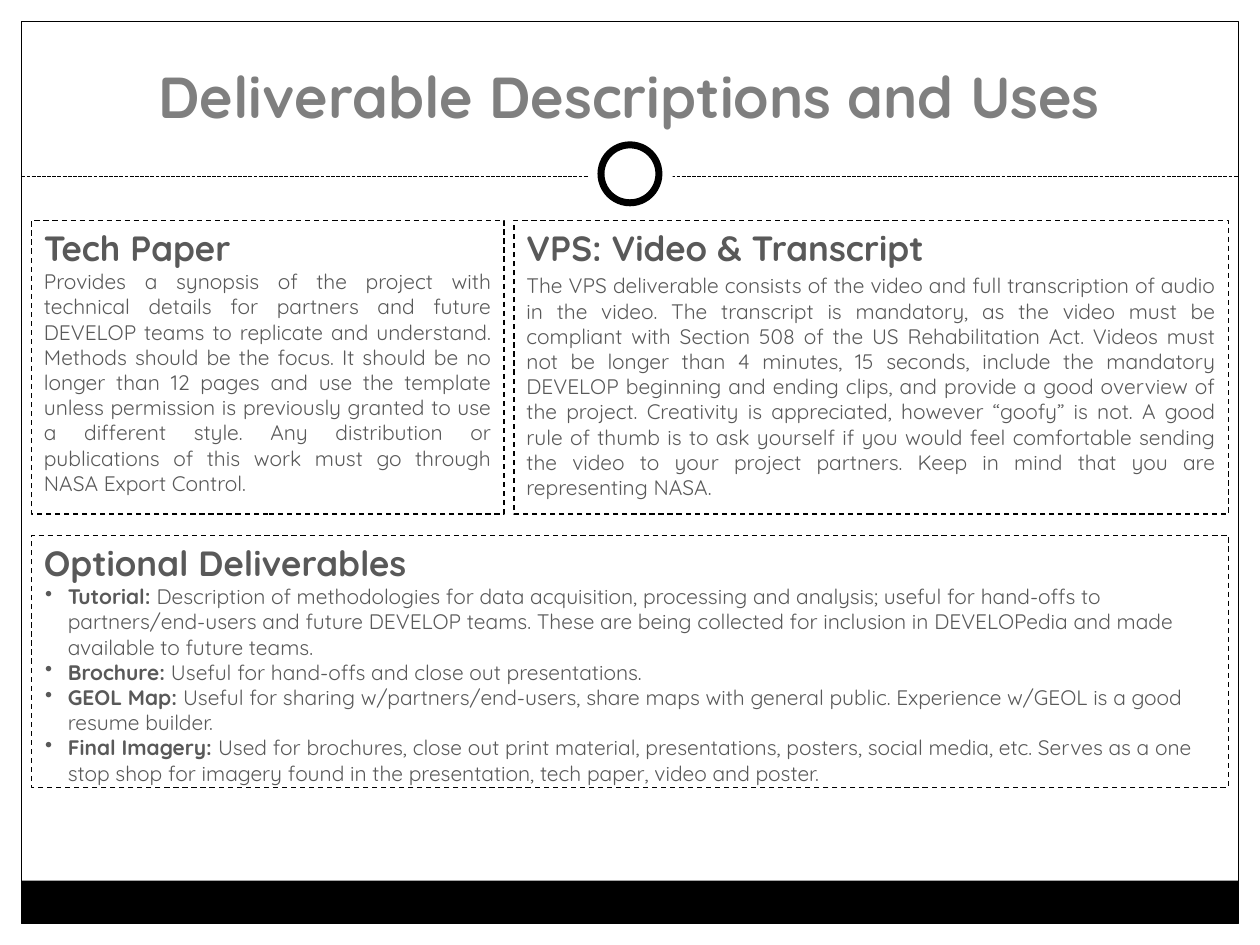
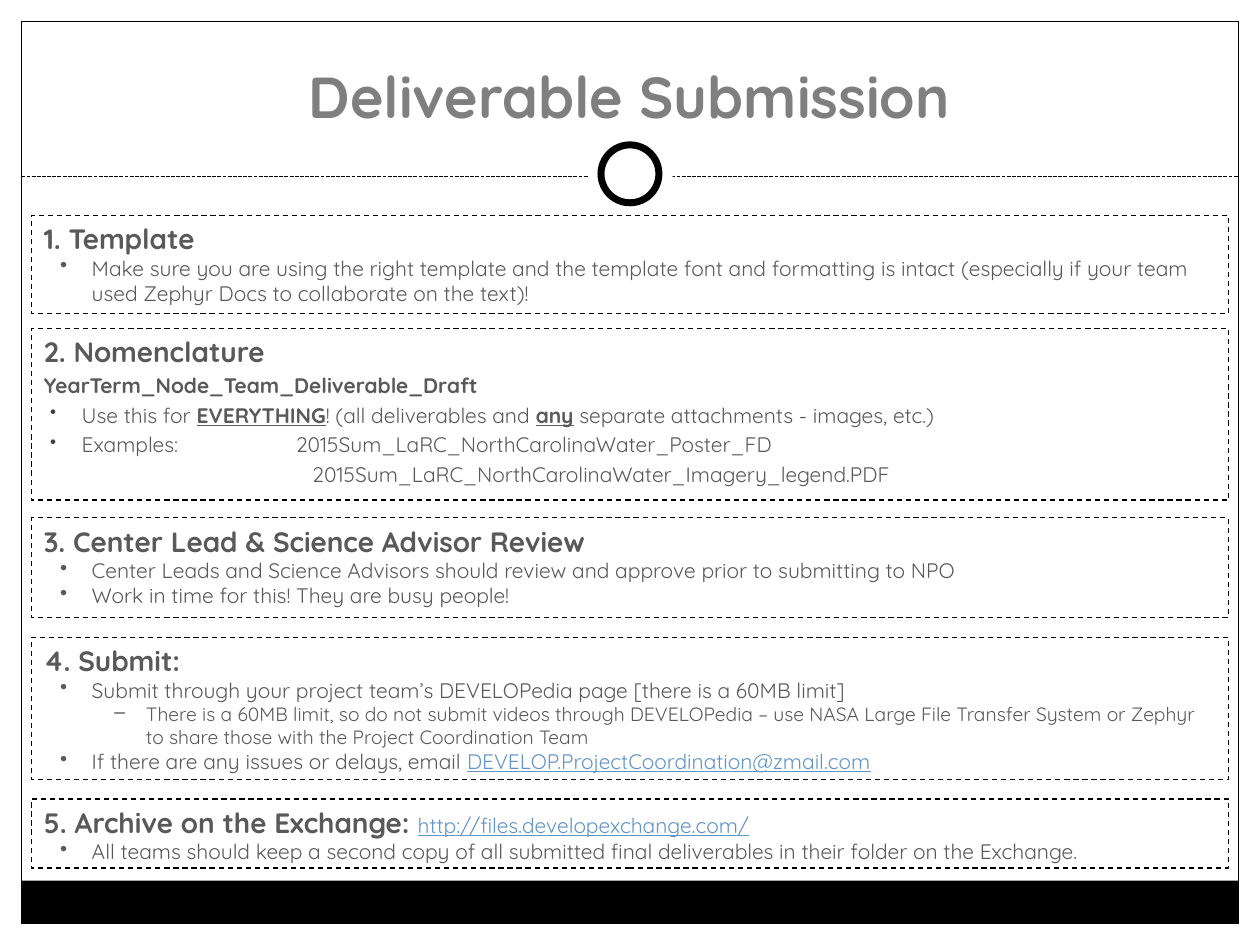
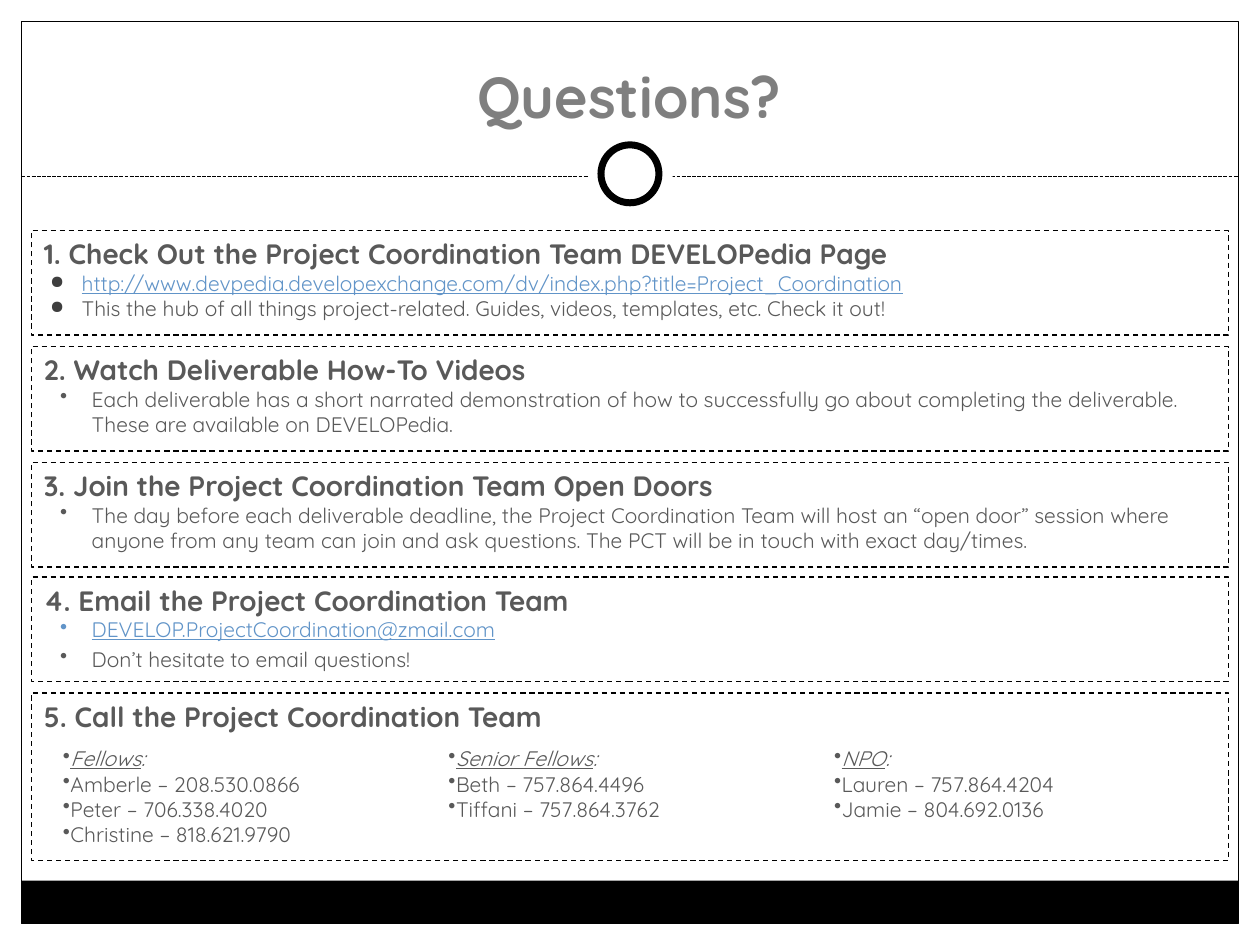
from dataclasses import dataclass

from lxml import etree
from pptx import Presentation
from pptx.dml.color import RGBColor
from pptx.enum.dml import MSO_LINE
from pptx.enum.shapes import MSO_CONNECTOR, MSO_SHAPE
from pptx.enum.text import MSO_ANCHOR, PP_ALIGN
from pptx.oxml.ns import qn
from pptx.shapes.autoshape import Shape
from pptx.slide import Slide
from pptx.text.text import TextFrame
from pptx.util import Emu, Pt

RECT = MSO_SHAPE.RECTANGLE
OVAL = MSO_SHAPE.OVAL
DASH = MSO_LINE.DASH
DOTS = MSO_LINE.SQUARE_DOT
STRAIGHT = MSO_CONNECTOR.STRAIGHT
TOP = MSO_ANCHOR.TOP
BOTTOM = MSO_ANCHOR.BOTTOM
LEFT = PP_ALIGN.LEFT
CENTER = PP_ALIGN.CENTER
JUST = PP_ALIGN.JUSTIFY

SCALE = 9144


def px(size: int) -> Emu:
    return Emu(size * SCALE)


@dataclass(frozen=True)
class Theme:
    font: str = "Quicksand"
    black: RGBColor = RGBColor(0x00, 0x00, 0x00)
    white: RGBColor = RGBColor(0xFF, 0xFF, 0xFF)
    title: RGBColor = RGBColor(0x7F, 0x7F, 0x7F)
    text: RGBColor = RGBColor(0x59, 0x59, 0x59)
    link: RGBColor = RGBColor(0x61, 0x94, 0xC8)
    dot: RGBColor = RGBColor(0x3F, 0x3F, 0x3F)
    banner: int = 33
    large: int = 20
    head: int = 16
    body: int = 12
    small: int = 11
    thin: float = 0.75
    thick: float = 4


THEME = Theme()


@dataclass(frozen=True)
class Box:
    left: int
    top: int
    width: int
    height: int


@dataclass(frozen=True)
class Dent:
    left: int = 0
    hang: int = 0
    mark: str = ""
    small: bool = False


@dataclass(frozen=True)
class Bit:
    text: str
    size: int = THEME.body
    color: RGBColor = THEME.text
    bold: bool = False
    slant: bool = False
    under: bool = False


@dataclass(frozen=True)
class Para:
    bits: tuple[Bit, ...]
    dent: Dent = Dent()
    gap: bool = False
    align: PP_ALIGN = LEFT


@dataclass(frozen=True)
class Panel:
    box: Box
    paras: tuple[Para, ...]


FLAT = Dent()
NEAR = Dent(19, -18, "•")
FAR = Dent(38, -25, "•")
SUB = Dent(81, -25, "–")
TINT = Dent(30, -25, "•", True)
ROUND = Dent(30, -25, "●", True)
TIGHT = Dent(6, -6, "•")
CASE = Dent(213)


def strong(text: str, size: int = THEME.body, under: bool = False) -> Bit:
    return Bit(text, size, bold=True, under=under)


def link(text: str) -> Bit:
    return Bit(text, color=THEME.link, under=True)


def head(text: str, size: int = THEME.head) -> Para:
    return Para((strong(text, size),))


def item(text: str, dent: Dent = FAR, size: int = THEME.body) -> Para:
    return Para((Bit(text, size),), dent)


def term(name: str, text: str) -> Para:
    return Para((strong(name + " "), Bit(text)), NEAR)


def indent(node: etree._Element, dent: Dent) -> None:
    node.set("marL", str(px(dent.left)))
    node.set("indent", str(px(dent.hang)))
    node.set("defTabSz", str(px(100)))
    if not dent.mark:
        etree.SubElement(node, qn("a:buNone"))
        return
    if dent.small:
        tone = etree.SubElement(node, qn("a:buClr"))
        etree.SubElement(tone, qn("a:srgbClr"), val=str(THEME.dot))
        etree.SubElement(node, qn("a:buSzPct"), val="85000")
    etree.SubElement(node, qn("a:buChar"), char=dent.mark)


def write(frame: TextFrame, paras: tuple[Para, ...], anchor: MSO_ANCHOR = TOP) -> None:
    frame.word_wrap = True
    frame.vertical_anchor = anchor
    frame.text = "\n".join("" for _ in paras)
    for line, para in zip(frame.paragraphs, paras):
        indent(line._p.get_or_add_pPr(), para.dent)
        line.alignment = para.align
        if para.gap:
            line.space_before = Pt(para.bits[0].size * 0.2)
        for bit in para.bits:
            run = line.add_run()
            run.text = bit.text
            font = run.font
            font.name = THEME.font
            font.size = Pt(bit.size)
            font.color.rgb = bit.color
            font.bold = bit.bold
            font.italic = bit.slant
            font.underline = bit.under


def draw(
    slide: Slide,
    box: Box,
    kind: MSO_SHAPE = RECT,
    fill: RGBColor | None = None,
    width: float = 0,
) -> Shape:
    shape = slide.shapes.add_shape(
        kind, px(box.left), px(box.top), px(box.width), px(box.height)
    )
    shape.shadow.inherit = False
    if fill is None:
        shape.fill.background()
    else:
        shape.fill.solid()
        shape.fill.fore_color.rgb = fill
    if width:
        shape.line.color.rgb = THEME.black
        shape.line.width = Pt(width)
    else:
        shape.line.fill.background()
    return shape


def label(slide: Slide, box: Box) -> TextFrame:
    return slide.shapes.add_textbox(
        px(box.left), px(box.top), px(box.width), px(box.height)
    ).text_frame


def rule(slide: Slide, left: int, right: int, top: int) -> None:
    line = slide.shapes.add_connector(STRAIGHT, px(left), px(top), px(right), px(top))
    line.line.color.rgb = THEME.black
    line.line.width = Pt(THEME.thin)
    line.line.dash_style = DOTS
    etree.SubElement(line._element.spPr, qn("a:effectLst"))


def start(deck: Presentation, title: str) -> Slide:
    slide = deck.slides.add_slide(deck.slide_layouts[6])
    draw(slide, Box(17, 699, 966, 34), fill=THEME.black)
    draw(slide, Box(17, 17, 966, 716), width=THEME.thin)
    rule(slide, 17, 983, 140)
    draw(slide, Box(467, 105, 67, 67), OVAL, THEME.white)
    draw(slide, Box(477, 115, 46, 46), OVAL, THEME.white, THEME.thick)
    bit = Bit(title, THEME.banner, THEME.title, bold=True)
    write(label(slide, Box(33, 25, 933, 83)), (Para((bit,), align=CENTER),), BOTTOM)
    return slide


def fill(slide: Slide, panels: list[Panel]) -> None:
    for panel in panels:
        shape = draw(slide, panel.box, width=THEME.thin)
        shape.line.dash_style = DASH
        write(shape.text_frame, panel.paras)


def wide(top: int, height: int, *paras: Para) -> Panel:
    return Panel(Box(25, top, 950, height), paras)


MAIL = link("DEVELOP.ProjectCoordination@zmail.com")

USES = [
    Panel(Box(25, 175, 375, 233), (
        head("Tech Paper", THEME.large),
        Para((Bit(
            "Provides a synopsis of the project with technical details for partners and "
            "future DEVELOP teams to replicate and understand. Methods should be the focus. "
            "It should be no longer than 12 pages and use the template unless permission is "
            "previously granted to use a different style. Any distribution or publications "
            "of this work must go through NASA Export Control."
        ),), align=JUST),
    )),
    Panel(Box(408, 175, 567, 233), (
        head("VPS: Video & Transcript", THEME.large),
        Para((Bit(
            "The VPS deliverable consists of the video and full transcription of audio in "
            "the video. The transcript is mandatory, as the video must be compliant with "
            "Section 508 of the US Rehabilitation Act. Videos must not be longer than 4 "
            "minutes, 15 seconds, include the mandatory DEVELOP beginning and ending clips, "
            "and provide a good overview of the project. Creativity is appreciated, however "
            "“goofy” is not. A good rule of thumb is to ask yourself if you would feel "
            "comfortable sending the video to your project partners. Keep in mind that you "
            "are representing NASA."
        ),), gap=True, align=JUST),
    )),
    wide(
        425, 200,
        head("Optional Deliverables", THEME.large),
        term("Tutorial:", "Description of methodologies for data acquisition, processing "
             "and analysis; useful for hand-offs to partners/end-users and future DEVELOP "
             "teams. These are being collected for inclusion in DEVELOPedia and made "
             "available to future teams."),
        term("Brochure:", "Useful for hand-offs and close out presentations."),
        term("GEOL Map:", "Useful for sharing w/partners/end-users, share maps with general "
             "public. Experience w/GEOL is a good resume builder."),
        term("Final Imagery:", "Used for brochures, close out print material, presentations, "
             "posters, social media, etc. Serves as a one stop shop for imagery found in the "
             "presentation, tech paper, video and poster."),
    ),
]

STEPS = [
    wide(
        171, 78,
        head("1. Template"),
        item("Make sure you are using the right template and the template font and "
             "formatting is intact (especially if your team used Zephyr Docs to collaborate "
             "on the text)!"),
    ),
    wide(
        261, 136,
        head("2. Nomenclature"),
        Para((strong("YearTerm_Node_Team_Deliverable_Draft"),), gap=True),
        Para((
            Bit("Use this for "),
            strong("EVERYTHING", under=True),
            Bit("! (all deliverables and "),
            strong("any", under=True),
            Bit(" separate attachments - images, etc.)"),
        ), TINT, True),
        Para((Bit("Examples:\t2015Sum_LaRC_NorthCarolinaWater_Poster_FD"),), TINT, True),
        Para((Bit("2015Sum_LaRC_NorthCarolinaWater_Imagery_legend.PDF"),), CASE, True),
    ),
    wide(
        411, 79,
        head("3. Center Lead & Science Advisor Review"),
        item("Center Leads and Science Advisors should review and approve prior to "
             "submitting to NPO"),
        item("Work in time for this! They are busy people!"),
    ),
    wide(
        506, 113,
        head("4. Submit:"),
        item("Submit through your project team’s DEVELOPedia page [there is a 60MB limit]"),
        item("There is a 60MB limit, so do not submit videos through DEVELOPedia – use NASA "
             "Large File Transfer System or Zephyr to share those with the Project "
             "Coordination Team", SUB, THEME.small),
        Para((Bit("If there are any issues or delays, email "), MAIL), FAR),
    ),
    wide(
        634, 55,
        Para((
            strong("5. Archive on the Exchange: ", THEME.head),
            link("http://files.developexchange.com/"),
        )),
        item("All teams should keep a second copy of all submitted final deliverables in "
             "their folder on the Exchange."),
    ),
]

HELP = [
    (
        head("1. Check Out the Project Coordination Team DEVELOPedia Page"),
        Para((link("http://www.devpedia.developexchange.com/dv/index.php"
                   "?title=Project_Coordination"),), ROUND),
        item("This the hub of all things project-related. Guides, videos, templates, etc. "
             "Check it out!", ROUND),
    ),
    (
        head("2. Watch Deliverable How-To Videos"),
        item("Each deliverable has a short narrated demonstration of how to successfully go "
             "about completing the deliverable. These are available on DEVELOPedia."),
    ),
    (
        head("3. Join the Project Coordination Team Open Doors"),
        item("The day before each deliverable deadline, the Project Coordination Team will "
             "host an “open door” session where anyone from any team can join and ask "
             "questions. The PCT will be in touch with exact day/times."),
    ),
    (
        head("4. Email the Project Coordination Team"),
        Para((MAIL,), FAR),
        Para((Bit("Don’t hesitate to email questions!"),), FAR, True),
    ),
    (head("5. Call the Project Coordination Team"),),
]

PHONES = {
    "Fellows": (
        "Amberle – 208.530.0866",
        "Peter – 706.338.4020",
        "Christine – 818.621.9790",
    ),
    "Senior Fellows": ("Beth – 757.864.4496", "Tiffani – 757.864.3762"),
    "NPO": ("Lauren – 757.864.4204", "Jamie – 804.692.0136"),
}


def phones(slide: Slide) -> None:
    step = 306
    for col, (group, names) in enumerate(PHONES.items()):
        frame = label(slide, Box(50 + col * step, 592, step, 83))
        frame.margin_left = frame.margin_right = 0
        frame.margin_top = frame.margin_bottom = 0
        lead = Para((Bit(group, slant=True, under=True), Bit(":", slant=True)), TIGHT)
        write(frame, (lead, *(item(name, TIGHT) for name in names)))


def main() -> None:
    deck = Presentation()
    deck.slide_width = px(1000)
    deck.slide_height = px(750)

    fill(start(deck, "Deliverable Descriptions and Uses"), USES)
    fill(start(deck, "Deliverable Submission"), STEPS)

    slide = start(deck, "Questions?")
    last = len(HELP) - 1
    fill(slide, [
        wide(round((550 + 275 * row) / 3), 133 if row == last else 83, *paras)
        for row, paras in enumerate(HELP)
    ])
    phones(slide)

    deck.save("out.pptx")


if __name__ == "__main__":
    main()
